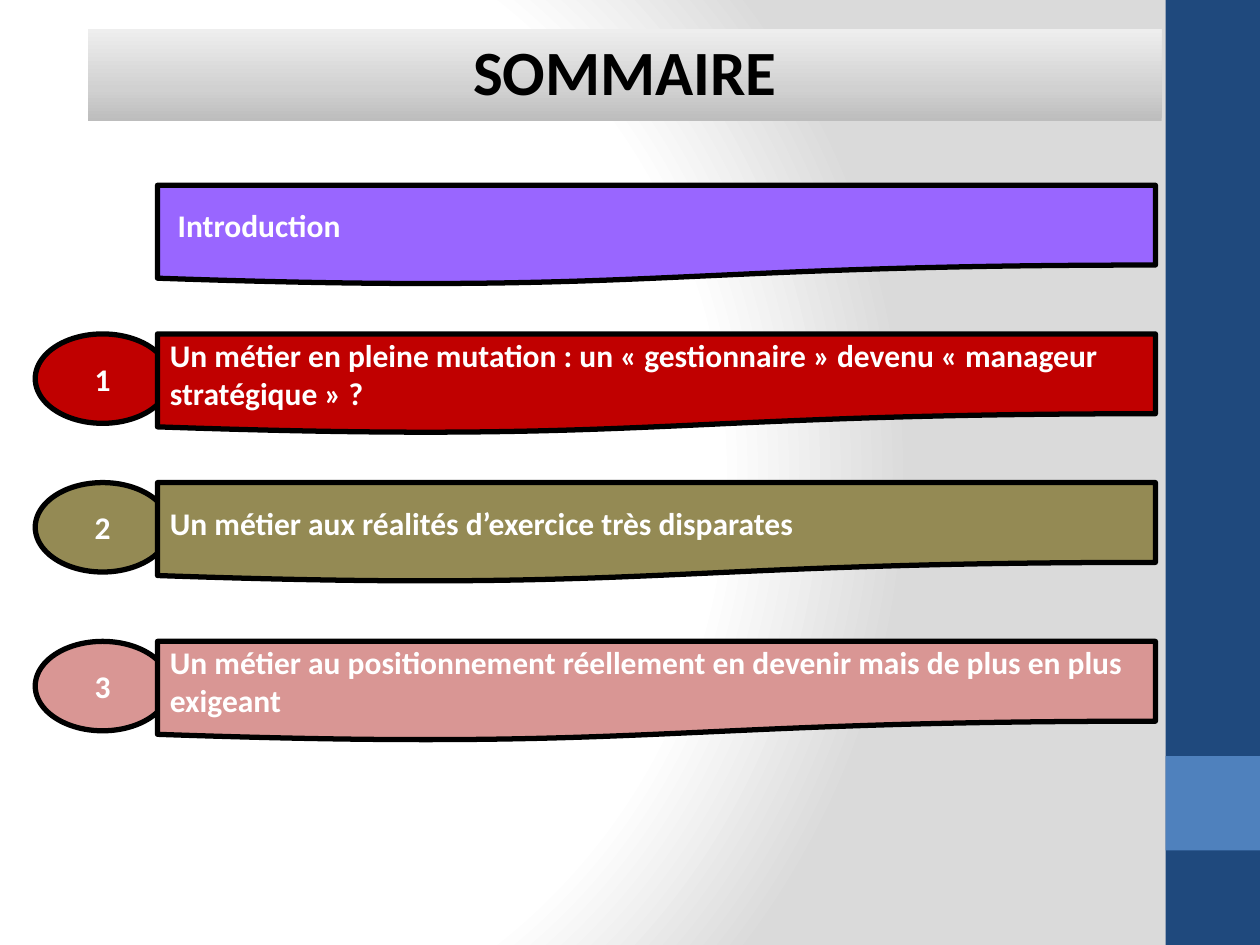
from lxml.etree import SubElement
from pptx import Presentation
from pptx.dml.color import RGBColor
from pptx.enum.shapes import MSO_SHAPE
from pptx.enum.text import MSO_ANCHOR, MSO_AUTO_SIZE, PP_ALIGN
from pptx.oxml import parse_xml
from pptx.oxml.ns import nsdecls, qn
from pptx.util import Inches, Pt

CHAPTERS = [
    (2.65, "1", "C00000", "Un métier en pleine mutation : un « gestionnaire » devenu « manageur stratégique » ?"),
    (3.83, "2", "948A54", "Un métier aux réalités d’exercice très disparates"),
    (5.09, "3", "D99694", "Un métier au positionnement réellement en devenir mais de plus en plus exigeant"),
]


def color(value):
    """Return the colour of a hex string."""
    return RGBColor.from_string(value)


def apply_gradient(fill, owner, stops, direction):
    """Fill an object with a gradient of (percent, colour) stops."""
    fill.solid()
    solid = next(owner.iter(qn("a:solidFill")))
    gradient = parse_xml(f'<a:gradFill {nsdecls("a")} rotWithShape="1"><a:gsLst/>{direction}</a:gradFill>')
    for position, value in stops:
        stop = SubElement(gradient[0], qn("a:gs"), pos=str(position * 1000))
        SubElement(stop, qn("a:srgbClr"), val=value)
    solid.getparent().replace(solid, gradient)


def add_filled_shape(slide, kind, box, fill, outlined=True):
    """Add a flat shape in a box of inches, with or without a black outline."""
    shape = slide.shapes.add_shape(kind, *map(Inches, box))
    shape.shadow.inherit = False
    shape.fill.solid()
    shape.fill.fore_color.rgb = color(fill)
    if outlined:
        shape.line.color.rgb = color("000000")
        shape.line.width = Pt(3)
    else:
        shape.line.fill.background()
    return shape


def write_text(shape, text, size, text_color, alignment):
    """Write one bold, vertically centred paragraph and return it."""
    frame = shape.text_frame
    frame.word_wrap = True
    frame.auto_size = MSO_AUTO_SIZE.NONE
    frame.vertical_anchor = MSO_ANCHOR.MIDDLE
    frame.text = text
    paragraph = frame.paragraphs[0]
    paragraph.alignment = alignment
    font = paragraph.font
    font.name, font.size, font.bold = "Calibri", Pt(size), True
    font.color.rgb = color(text_color)
    return paragraph


def add_backdrop(slide):
    """Paint the background gradient."""
    apply_gradient(
        slide.background.fill, slide.element,
        [(0, "FFFFFF"), (75, "FFFFFF"), (100, "DADADA")],
        '<a:path path="circle"><a:fillToRect l="20000" t="50000" r="100000" b="50000"/></a:path>')


def add_side_band(slide, left, top, width, height):
    """Draw the side band with its lighter square."""
    add_filled_shape(slide, MSO_SHAPE.RECTANGLE, (left, top, width, height), "1F497D", False)
    square_top = top + height - 2 * width
    add_filled_shape(slide, MSO_SHAPE.RECTANGLE, (left, square_top, width, width), "4F81BD", False)


def place_title(slide, left, top, width, height):
    """Move and format the title placeholder."""
    title = slide.shapes.title
    title.left, title.top, title.width, title.height = map(Inches, (left, top, width, height))
    apply_gradient(title.fill, title.element, [(0, "BDBDBD"), (35, "D1D1D1"), (100, "EEEEEE")],
                   '<a:lin ang="16200000" scaled="1"/>')
    write_text(title, "SOMMAIRE", 36, "000000", PP_ALIGN.CENTER).line_spacing = 0.9
    frame = title.text_frame
    frame.margin_left = frame.margin_right = Inches(0.23)
    frame.margin_top = frame.margin_bottom = 0


def add_entry(slide, left, top, width, height, text, fill, number=None):
    """Add a summary banner, with a numbered oval behind its left end."""
    if number:
        oval = add_filled_shape(slide, MSO_SHAPE.OVAL, (left - 0.97, top, 1.07, 0.71), fill)
        write_text(oval, number, 18, "FFFFFF", PP_ALIGN.CENTER)
    banner = add_filled_shape(slide, MSO_SHAPE.FLOWCHART_DOCUMENT, (left, top, width, height), fill)
    write_text(banner, text, 18, "FFFFFF", PP_ALIGN.LEFT)
    return banner


def main():
    """Build the summary slide."""
    presentation = Presentation()
    presentation.slide_width, presentation.slide_height = Inches(10), Inches(7.5)
    slide = presentation.slides.add_slide(presentation.slide_layouts[5])
    add_backdrop(slide)
    add_side_band(slide, 9.25, 0, 0.75, 7.5)
    place_title(slide, 0.7, 0.23, 8.52, 0.73)
    introduction = add_entry(slide, 1.25, 1.47, 7.92, 0.79, "Introduction", "9966FF")
    introduction.text_frame.margin_left = Inches(0.16)
    for top, number, fill, text in CHAPTERS:
        add_entry(slide, 1.25, top, 7.92, 0.79, text, fill, number)
    presentation.save("out.pptx")


if __name__ == "__main__":
    main()
